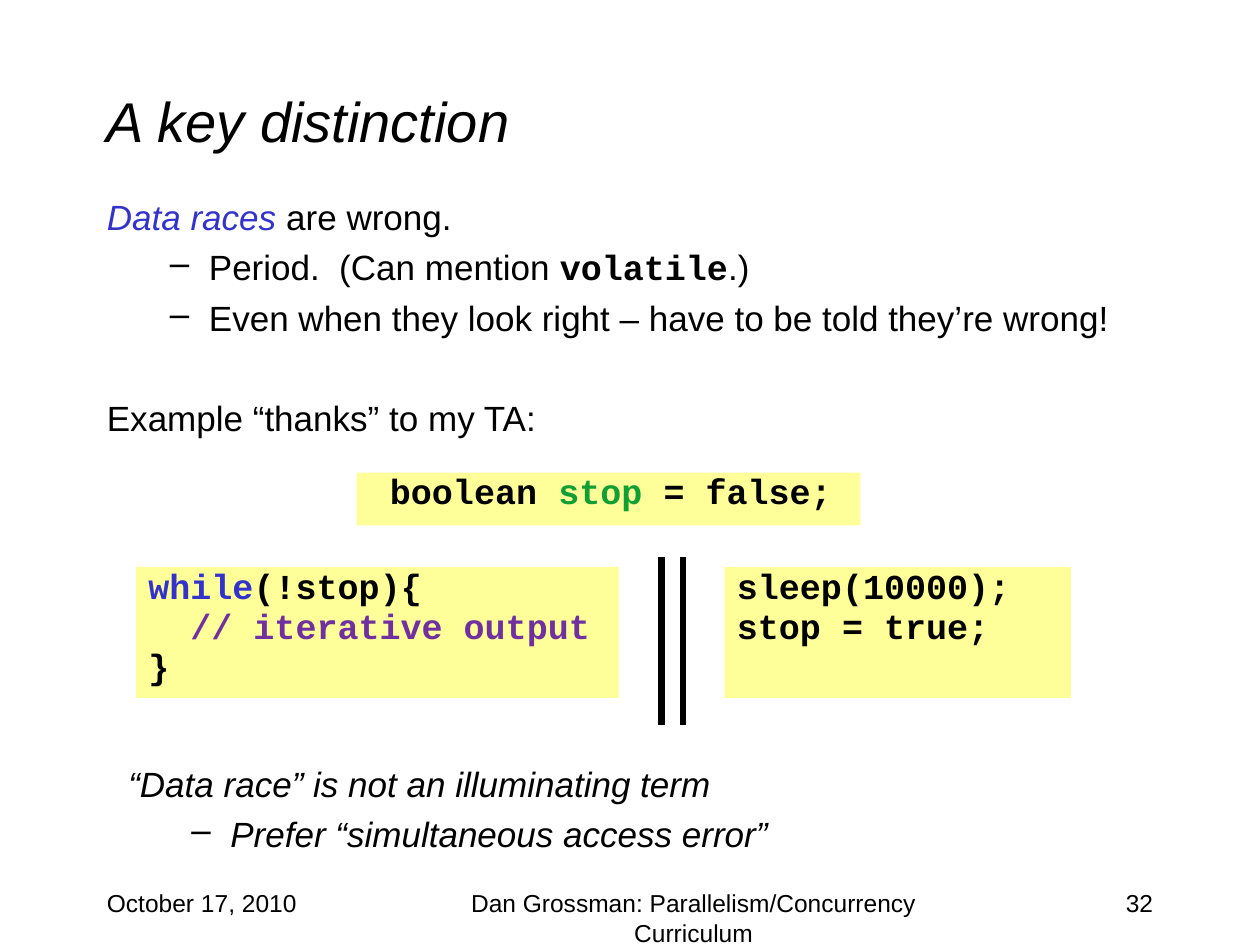
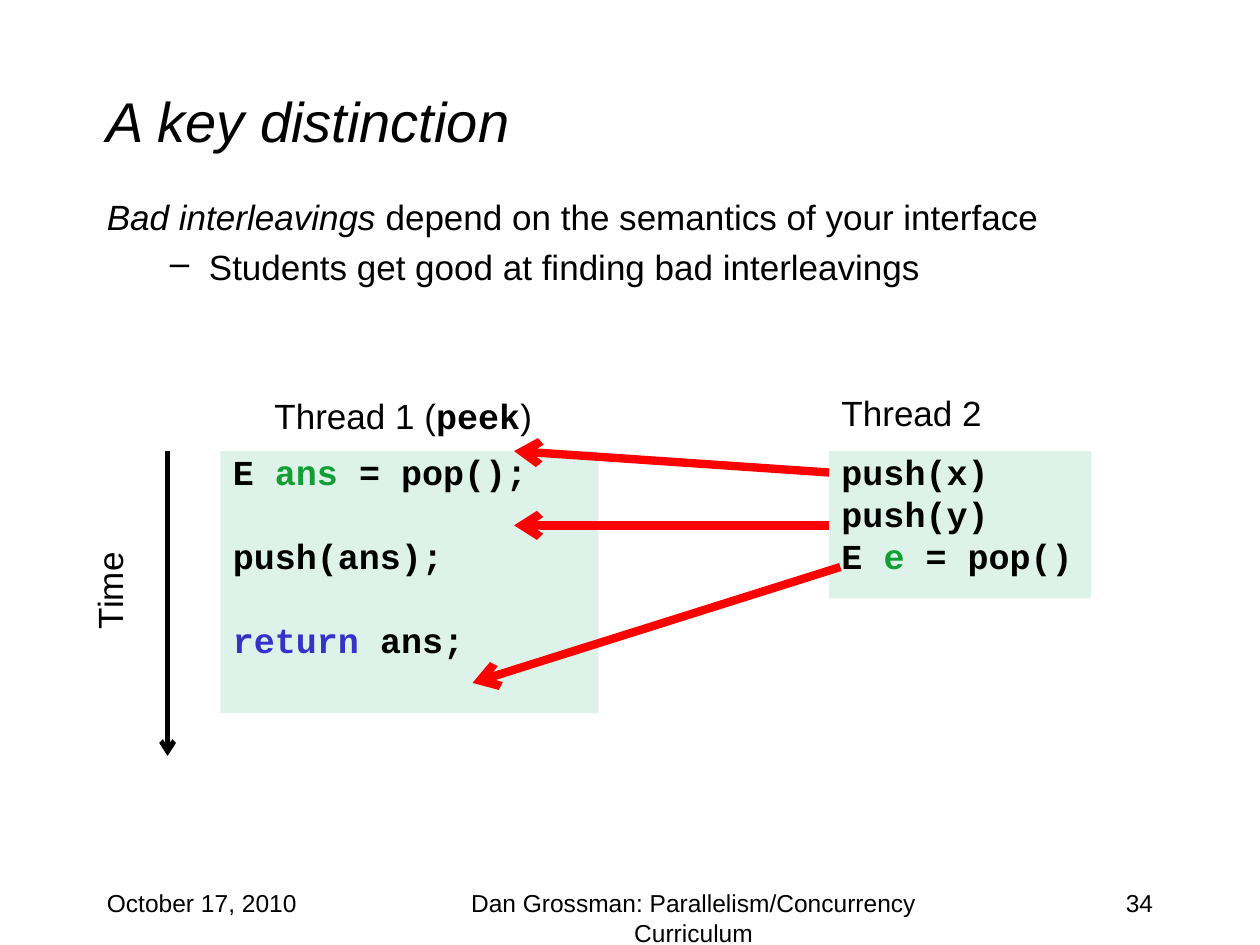
"""Builds two slides that set data races apart from bad interleavings."""
from lxml import etree
from pptx import Presentation
from pptx.dml.color import RGBColor
from pptx.enum.shapes import MSO_CONNECTOR, MSO_SHAPE
from pptx.enum.text import MSO_ANCHOR, PP_ALIGN
from pptx.oxml.ns import qn
from pptx.util import Inches, Pt

LEFT, CENTER, RIGHT = PP_ALIGN.LEFT, PP_ALIGN.CENTER, PP_ALIGN.RIGHT
TOP, MIDDLE = MSO_ANCHOR.TOP, MSO_ANCHOR.MIDDLE
RECTANGLE, STRAIGHT = MSO_SHAPE.RECTANGLE, MSO_CONNECTOR.STRAIGHT

BLACK, RED, BLUE = "000000", "FF0000", "3333CC"
GREEN, PURPLE = "119F33", "7030A0"
YELLOW, MINT = "FFFF99", "DDF3EA"

PLAIN = {"name": "Arial", "size": Pt(20), "bold": False, "italic": False}
ITALIC = {**PLAIN, "italic": True}
TITLE = {**ITALIC, "size": Pt(32)}
FOOTER = {**PLAIN, "size": Pt(14)}
CODE = {**PLAIN, "name": "Courier New", "bold": True}

BODY = {"space_before": Pt(5)}
BULLET = {**BODY, "level": 1}
AFTER_GAP = {"space_before": Pt(33)}
TIGHT = {"space_before": Pt(4), "line_spacing": Pt(19)}
LOOSE = {"space_before": Pt(4), "line_spacing": Pt(20)}
LOOSE_AFTER_GAP = {**LOOSE, "space_before": Pt(28)}


def color(hex_value):
    return RGBColor.from_string(hex_value)


def add_text(slide, box, paragraphs, fill=None, align=LEFT, anchor=TOP, wrap=True):
    """Paragraphs are (layout, runs) pairs; runs are (text, font, colour)."""
    box = [Inches(value) for value in box]
    if fill:
        holder = slide.shapes.add_shape(RECTANGLE, *box)
        holder.shadow.inherit = False
        holder.fill.solid()
        holder.fill.fore_color.rgb = color(fill)
        holder.line.fill.background()
    else:
        holder = slide.shapes.add_textbox(*box)
    frame = holder.text_frame
    frame.word_wrap = wrap
    frame.vertical_anchor = anchor
    for index, (layout, runs) in enumerate(paragraphs):
        paragraph = frame.add_paragraph() if index else frame.paragraphs[0]
        paragraph.alignment = align
        for attribute, value in layout.items():
            setattr(paragraph, attribute, value)
        if paragraph.level:
            properties = paragraph._p.get_or_add_pPr()
            properties.set("marL", str(Inches(0.81)))
            properties.set("indent", str(Inches(-0.31)))
            etree.SubElement(properties, qn("a:buChar")).set("char", "–")
        for words, font, hue in runs:
            run = paragraph.add_run()
            run.text = words
            run.font.color.rgb = color(hue)
            for attribute, value in font.items():
                setattr(run.font, attribute, value)
    return holder


deck = Presentation()
deck.slide_width, deck.slide_height = Inches(10), Inches(7.5)
races, interleavings = [deck.slides.add_slide(deck.slide_layouts[6]) for _ in range(2)]

for slide, number in ((races, "32"), (interleavings, "34")):
    add_text(slide, (0.75, 0.33, 8.5, 1.25),
             [({}, [("A key distinction", TITLE, BLACK)])], anchor=MIDDLE)
    for left, width, words, align in (
        (0.75, 2.08, "October 17, 2010", LEFT),
        (7.17, 2.08, number, RIGHT),
        (3.17, 4.67, "Dan Grossman: Parallelism/Concurrency Curriculum", CENTER),
    ):
        add_text(slide, (left, 7, width, 0.5), [({}, [(words, FOOTER, BLACK)])], align=align)

add_text(races, (0.75, 1.5, 8.5, 1.33), [
    (BODY, [("Data races ", ITALIC, BLUE), ("are wrong.", PLAIN, BLACK)]),
    (BULLET, [("Period.  (Can mention ", PLAIN, BLACK), ("volatile", CODE, BLACK),
              (".)", PLAIN, BLACK)]),
    (BULLET, [("Even when they look right – have to be told they’re wrong!", PLAIN, BLACK)]),
    (AFTER_GAP, [("Example “thanks” to my TA:", PLAIN, BLACK)]),
])
add_text(races, (2.83, 3.75, 4, 0.42), [
    (TIGHT, [(" boolean ", CODE, BLACK), ("stop ", CODE, GREEN), ("= false;", CODE, BLACK)]),
], fill=YELLOW)
loop_code = add_text(races, (1.08, 4.5, 3.83, 1.04), [
    (TIGHT, [("while", CODE, BLUE), ("(!stop){", CODE, BLACK)]),
    (TIGHT, [("// iterative output", CODE, PURPLE)]),
    (TIGHT, [("}", CODE, BLACK)]),
], fill=YELLOW)
loop_code.text_frame.paragraphs[1]._p.get_or_add_pPr().set("marL", str(Pt(24)))
add_text(races, (5.75, 4.5, 2.75, 1.04), [
    (TIGHT, [(line, CODE, BLACK)]) for line in ("sleep(10000);", "stop = true;")
], fill=YELLOW)
add_text(races, (0.92, 6, 8.5, 0.92), [
    (BODY, [("“Data race” is not an illuminating term", ITALIC, BLACK)]),
    (BULLET, [("Prefer “simultaneous access error”", ITALIC, BLACK)]),
])

add_text(interleavings, (0.75, 1.5, 8.5, 1.33), [
    (BODY, [("Bad interleavings", ITALIC, BLACK),
            (" depend on the semantics of your interface", PLAIN, BLACK)]),
    (BULLET, [("Students get good at finding bad interleavings", PLAIN, BLACK)]),
])
add_text(interleavings, (1.75, 3.58, 3, 2.08), [
    (LOOSE, [("E ", CODE, BLACK), ("ans", CODE, GREEN), (" = pop();", CODE, BLACK)]),
    (LOOSE_AFTER_GAP, [("push(ans);", CODE, BLACK)]),
    (LOOSE_AFTER_GAP, [("return ", CODE, BLUE), ("ans;", CODE, BLACK)]),
], fill=MINT)
add_text(interleavings, (6.58, 3.58, 2.08, 1.17), [
    (LOOSE, [("push(x)", CODE, BLACK)]),
    (LOOSE, [("push(y)", CODE, BLACK)]),
    (LOOSE, [("E ", CODE, BLACK), ("e", CODE, GREEN), (" = pop()", CODE, BLACK)]),
], fill=MINT)
time_label = add_text(interleavings, (0.46, 4.46, 0.82, 0.44),
                      [({}, [("Time", PLAIN, BLACK)])], wrap=False)
time_label.rotation = 270
add_text(interleavings, (6.58, 3.06, 1.32, 0.44),
         [({}, [("Thread 2", PLAIN, BLACK)])], wrap=False)
add_text(interleavings, (2.08, 3.08, 2.26, 0.44), [
    ({}, [("Thread 1 (", PLAIN, BLACK), ("peek", CODE, BLACK), (")", PLAIN, BLACK)]),
], wrap=False)

for slide, ends, hue, weight, has_arrow in (
    (races, (5.25, 4.42, 5.25, 5.75), BLACK, 3.75, False),
    (races, (5.42, 4.42, 5.42, 5.75), BLACK, 3.75, False),
    (interleavings, (1.33, 3.58, 1.33, 6), BLACK, 2.75, True),
    (interleavings, (6.58, 4.17, 4.08, 4.17), RED, 4.75, True),
    (interleavings, (6.58, 3.75, 4.08, 3.58), RED, 4.75, True),
    (interleavings, (6.67, 4.5, 3.75, 5.42), RED, 4.75, True),
):
    stroke = slide.shapes.add_connector(STRAIGHT, *[Inches(value) for value in ends])
    stroke.line.color.rgb = color(hue)
    stroke.line.width = Pt(weight)
    if has_arrow:
        etree.SubElement(stroke.line._get_or_add_ln(), qn("a:tailEnd")).set("type", "arrow")
    etree.SubElement(stroke._element.spPr, qn("a:effectLst"))

deck.save("out.pptx")
